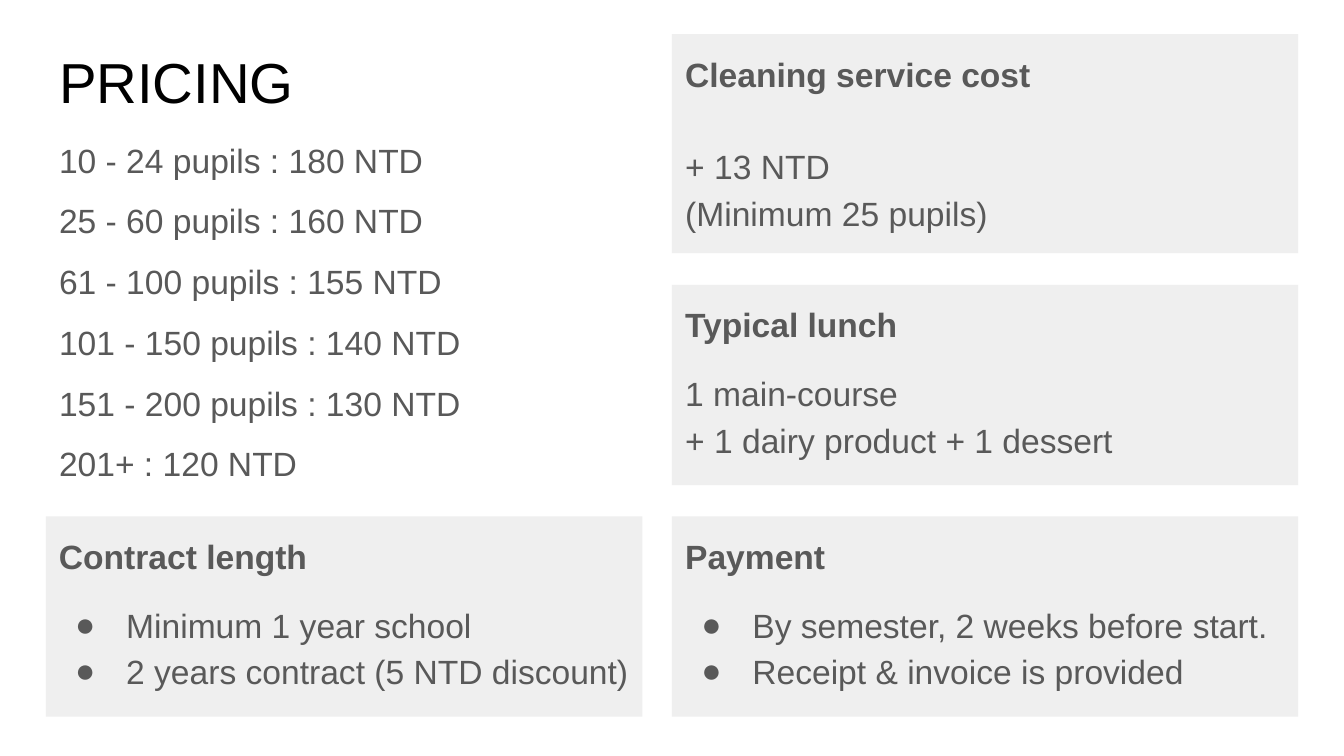
import pptx
import pptx.dml.color
import pptx.enum.shapes
import pptx.enum.text
import pptx.oxml.ns
import pptx.util
from lxml import etree

BLACK = pptx.dml.color.RGBColor(0x00, 0x00, 0x00)
GRAY = pptx.dml.color.RGBColor(0x59, 0x59, 0x59)
PALE = pptx.dml.color.RGBColor(0xEF, 0xEF, 0xEF)
FONT = "Arial"
BODY_SIZE = 18
PARAGRAPH_GAP = 12
BLANK_LINE = 24.8
CARD_SPACING = 1.15
PRICE_SPACING = 0.95
INSET = pptx.util.Inches(0.1)
SLIDE_WIDTH = pptx.util.Inches(10)
SLIDE_HEIGHT = SLIDE_WIDTH * 9 // 16
COLUMN = SLIDE_WIDTH / 100
ROW = SLIDE_HEIGHT / 100

LEFT, RIGHT = 3.41, 50
LEFT_WIDTH, RIGHT_WIDTH = 44.4, 46.6
TOP, MIDDLE, BOTTOM = 4.5, 37.69, 68.32
TALL, SHORT = 28.98, 26.49

PRICES = [
    "10 - 24 pupils : 180 NTD",
    "25 - 60 pupils : 160 NTD",
    "61 - 100 pupils : 155 NTD",
    "101 - 150 pupils : 140 NTD",
    "151 - 200 pupils : 130 NTD",
    "201+ : 120 NTD",
]
CARDS = [
    ((RIGHT, TOP, RIGHT_WIDTH, TALL), "Cleaning service cost",
     ["+ 13 NTD\n(Minimum 25 pupils)"], BLANK_LINE, False),
    ((RIGHT, MIDDLE, RIGHT_WIDTH, SHORT), "Typical lunch",
     ["1 main-course\n+ 1 dairy product + 1 dessert"], PARAGRAPH_GAP, False),
    ((LEFT, BOTTOM, LEFT_WIDTH, SHORT), "Contract length",
     ["Minimum 1 year school", "2 years contract (5 NTD discount)"], PARAGRAPH_GAP, True),
    ((RIGHT, BOTTOM, RIGHT_WIDTH, SHORT), "Payment",
     ["By semester, 2 weeks before start.", "Receipt & invoice is provided"], PARAGRAPH_GAP, True),
]


def place(box):
    """Turn a box in grid columns and rows into slide lengths."""
    left, top, width, height = box
    return round(left * COLUMN), round(top * ROW), round(width * COLUMN), round(height * ROW)


def prepare_frame(shape):
    """Set wrapping, anchor and insets of a shape and return its text frame."""
    frame = shape.text_frame
    frame.word_wrap = True
    frame.vertical_anchor = pptx.enum.text.MSO_ANCHOR.TOP
    frame.margin_left = frame.margin_right = INSET
    frame.margin_top = frame.margin_bottom = INSET
    return frame


def add_bullet(paragraph):
    """Give a paragraph a hanging round bullet."""
    properties = paragraph._p.get_or_add_pPr()
    properties.set("marL", str(pptx.util.Inches(0.5)))
    properties.set("indent", str(pptx.util.Inches(-0.38)))
    color = etree.SubElement(properties, pptx.oxml.ns.qn("a:buClr"))
    etree.SubElement(color, pptx.oxml.ns.qn("a:srgbClr"), val=str(GRAY))
    etree.SubElement(properties, pptx.oxml.ns.qn("a:buSzPts"), val=str(BODY_SIZE * 100))
    etree.SubElement(properties, pptx.oxml.ns.qn("a:buFont"), typeface=FONT)
    etree.SubElement(properties, pptx.oxml.ns.qn("a:buChar"), char="●")


def style_paragraph(paragraph, text, size=BODY_SIZE, color=GRAY, bold=False, spacing=1.0, before=0):
    """Fill a paragraph and set its font and spacing."""
    paragraph.text = text
    paragraph.alignment = pptx.enum.text.PP_ALIGN.LEFT
    paragraph.line_spacing = spacing
    paragraph.space_before = pptx.util.Pt(before)
    paragraph.font.name = FONT
    paragraph.font.size = pptx.util.Pt(size)
    paragraph.font.bold = bold
    paragraph.font.color.rgb = color


def add_title(slide, box, text):
    """Place the slide title."""
    frame = prepare_frame(slide.shapes.add_textbox(*place(box)))
    style_paragraph(frame.paragraphs[0], text, size=30.2, color=BLACK)


def add_prices(slide, box, prices):
    """Place the list of prices by number of pupils."""
    frame = prepare_frame(slide.shapes.add_textbox(*place(box)))
    for index, price in enumerate(prices):
        paragraph = frame.add_paragraph() if index else frame.paragraphs[0]
        style_paragraph(paragraph, price, spacing=PRICE_SPACING, before=PARAGRAPH_GAP if index else 0)


def add_card(slide, box, heading, entries, gap, bulleted):
    """Place a shaded card with a bold heading above its entries."""
    card = slide.shapes.add_shape(pptx.enum.shapes.MSO_SHAPE.RECTANGLE, *place(box))
    card.shadow.inherit = False
    card.fill.solid()
    card.fill.fore_color.rgb = PALE
    card.line.fill.background()
    frame = prepare_frame(card)
    style_paragraph(frame.paragraphs[0], heading, bold=True, spacing=CARD_SPACING)
    for index, entry in enumerate(entries):
        paragraph = frame.add_paragraph()
        if bulleted:
            add_bullet(paragraph)
        style_paragraph(paragraph, entry, spacing=CARD_SPACING, before=0 if index else gap)


def main():
    """Build the pricing slide and save it."""
    presentation = pptx.Presentation()
    presentation.slide_width = SLIDE_WIDTH
    presentation.slide_height = SLIDE_HEIGHT
    slide = presentation.slides.add_slide(presentation.slide_layouts[6])
    add_title(slide, (LEFT, TOP, 93.2, 11.2), "PRICING")
    add_prices(slide, (LEFT, 17.1, 33.9, 49.78), PRICES)
    for card in CARDS:
        add_card(slide, *card)
    presentation.save("out.pptx")


if __name__ == "__main__":
    main()
